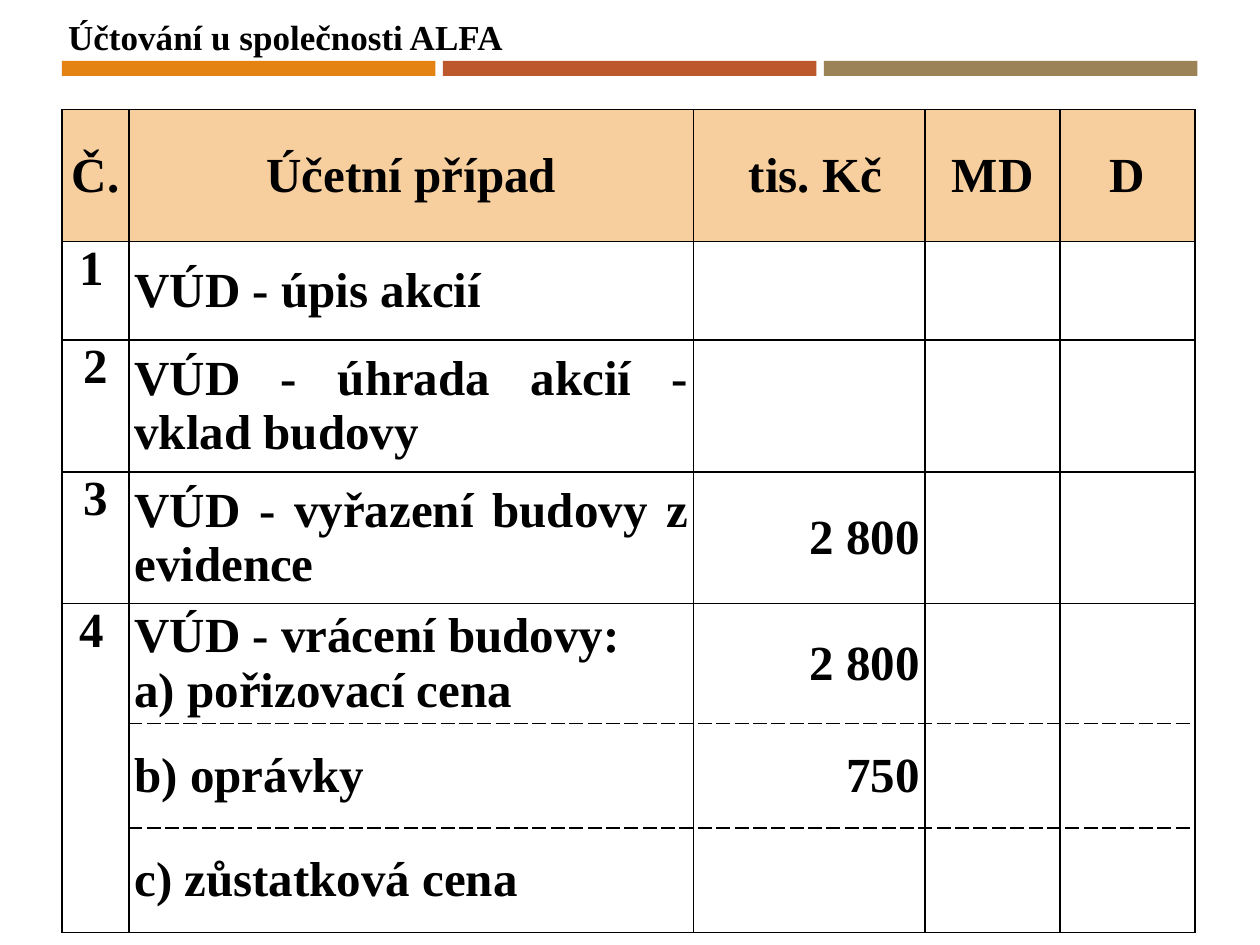
from lxml import etree
from pptx import Presentation
from pptx.dml.color import RGBColor
from pptx.enum.shapes import MSO_SHAPE
from pptx.enum.text import MSO_ANCHOR, MSO_AUTO_SIZE, PP_ALIGN
from pptx.oxml.ns import qn
from pptx.util import Cm, Pt

RECTANGLE = MSO_SHAPE.RECTANGLE
TOP, MIDDLE = MSO_ANCHOR.TOP, MSO_ANCHOR.MIDDLE
NO_AUTOFIT = MSO_AUTO_SIZE.NONE
LEFT, CENTER, RIGHT, JUSTIFY = PP_ALIGN.LEFT, PP_ALIGN.CENTER, PP_ALIGN.RIGHT, PP_ALIGN.JUSTIFY

BLACK = RGBColor(0x00, 0x00, 0x00)
ORANGE = RGBColor(0xE4, 0x83, 0x12)
RUST = RGBColor(0xBD, 0x58, 0x2C)
KHAKI = RGBColor(0x9B, 0x83, 0x57)
PEACH = RGBColor(0xF7, 0xCE, 0x9D)
FONT = "Times New Roman"


def format_text(frame, size, alignment):
    for para in frame.paragraphs:
        para.alignment = alignment
        for span in para.runs:
            span.font.name = FONT
            span.font.size = Pt(size)
            span.font.bold = True
            span.font.color.rgb = BLACK


def add_border(cell, side, dash):
    properties = cell._tc.get_or_add_tcPr()
    line = etree.SubElement(properties, qn(f"a:ln{side}"), w=str(Pt(1)))
    fill = etree.SubElement(line, qn("a:solidFill"))
    etree.SubElement(fill, qn("a:srgbClr"), val=str(BLACK))
    etree.SubElement(line, qn("a:prstDash"), val=dash)


deck = Presentation()
deck.slide_width, deck.slide_height = Cm(25.4), Cm(19.05)
page = deck.slides.add_slide(deck.slide_layouts[5])

for index, color in enumerate((ORANGE, RUST, KHAKI)):
    bar = page.shapes.add_shape(RECTANGLE, Cm(1.25 + 7.68 * index), Cm(1.23), Cm(7.53), Cm(0.3))
    bar.shadow.inherit = False
    bar.fill.solid()
    bar.fill.fore_color.rgb = color
    bar.line.fill.background()

title = page.shapes.title
title.left, title.top, title.width, title.height = Cm(1.12), Cm(0.18), Cm(9.35), Cm(1.11)
title_frame = title.text_frame
title_frame.text = "Účtování u společnosti ALFA"
title_frame.word_wrap = False
title_frame.auto_size = NO_AUTOFIT
title_frame.vertical_anchor = TOP
format_text(title_frame, 20, LEFT)

rows = [
    ("Č.", "Účetní případ", " tis. Kč", "MD", "D"),
    (" 1", "VÚD - úpis akcií ", "", "", ""),
    ("2", "VÚD - úhrada akcií - vklad budovy", "", "", ""),
    ("3", "VÚD - vyřazení budovy z evidence", "2 800", "", ""),
    (" 4", "VÚD - vrácení budovy:\na) pořizovací cena", "2 800", "", ""),
    ("", "b) oprávky", "750", "", ""),
    ("", "c) zůstatková cena", "", "", ""),
]
column_widths = (1.35, 11.38, 4.67, 2.72, 2.72)
row_heights = (2.66, 1.98, 2.66, 2.66, 2.41, 2.11, 2.11)
body_alignments = (CENTER, JUSTIFY, RIGHT, RIGHT, RIGHT)
dashed_above, dashed_below = (5, 6), (4, 5)

table = page.shapes.add_table(
    len(rows), len(column_widths), Cm(1.25), Cm(2.21),
    Cm(sum(column_widths)), Cm(sum(row_heights))).table
table.first_row = False
table.horz_banding = False
for column, width in zip(table.columns, column_widths):
    column.width = Cm(width)
for row, height in zip(table.rows, row_heights):
    row.height = Cm(height)

for row_index, texts in enumerate(rows):
    header = row_index == 0
    for column_index, text in enumerate(texts):
        cell = table.cell(row_index, column_index)
        number = column_index == 0
        cell.margin_left = cell.margin_right = Cm(0.11)
        cell.margin_top = cell.margin_bottom = 0
        cell.vertical_anchor = TOP if number and not header else MIDDLE
        above = "dash" if row_index in dashed_above and not number else "solid"
        below = "dash" if row_index in dashed_below and not number else "solid"
        for side, dash in (("L", "solid"), ("R", "solid"), ("T", above), ("B", below)):
            add_border(cell, side, dash)
        if header:
            cell.fill.solid()
            cell.fill.fore_color.rgb = PEACH
        else:
            cell.fill.background()
        if text:
            cell.text_frame.text = text
            alignment = CENTER if header else body_alignments[column_index]
            if number and text.startswith(" "):
                alignment = LEFT
            format_text(cell.text_frame, 28, alignment)

table.cell(4, 0).merge(table.cell(6, 0))

deck.save("out.pptx")
